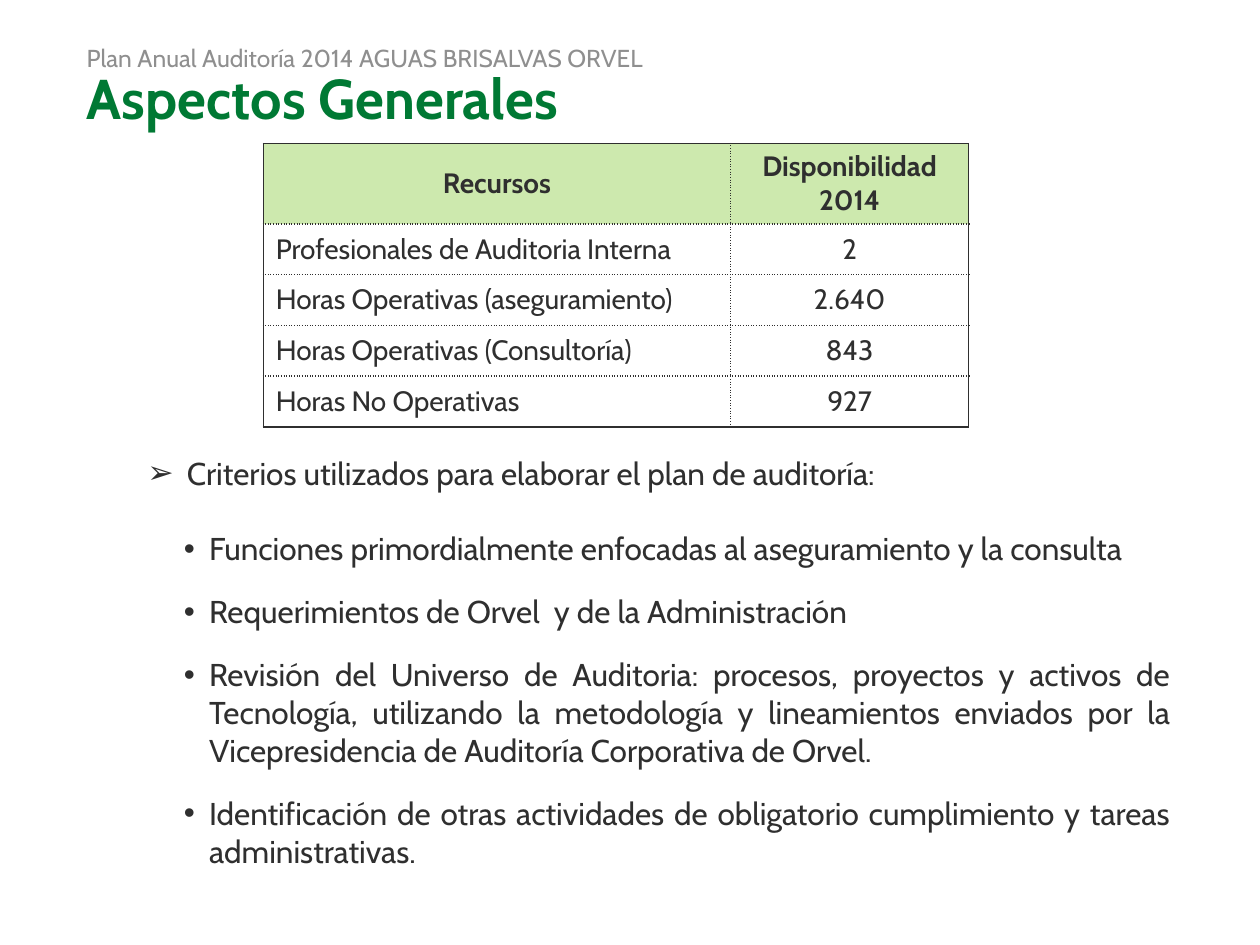
from lxml import etree
from pptx import Presentation
from pptx.dml.color import RGBColor
from pptx.enum.text import MSO_ANCHOR, MSO_AUTO_SIZE, PP_ALIGN
from pptx.oxml.ns import qn
from pptx.util import Pt

LEFT, CENTER, JUSTIFY = PP_ALIGN.LEFT, PP_ALIGN.CENTER, PP_ALIGN.JUSTIFY
TOP, MIDDLE = MSO_ANCHOR.TOP, MSO_ANCHOR.MIDDLE
FIXED = MSO_AUTO_SIZE.NONE

INK = RGBColor(0x2F, 0x2F, 0x2F)
GRAY = RGBColor(0x8F, 0x8F, 0x8F)
GREEN = RGBColor(0x00, 0x79, 0x34)
LIME = RGBColor(0xCD, 0xE9, 0xAE)

ROWS = [
    ("Recursos", "Disponibilidad 2014"),
    ("Profesionales de Auditoria Interna", "2"),
    ("Horas Operativas (aseguramiento)", "2.640"),
    ("Horas Operativas (Consultoría)", "843"),
    ("Horas No Operativas", "927"),
]
ITEMS = [
    "Funciones primordialmente enfocadas al aseguramiento y la consulta",
    "Requerimientos de Orvel  y de la Administración",
    "Revisión del Universo de Auditoria: procesos, proyectos y activos de "
    "Tecnología, utilizando la metodología y lineamientos enviados por la "
    "Vicepresidencia de Auditoría Corporativa de Orvel.",
    "Identificación de otras actividades de obligatorio cumplimiento y tareas "
    "administrativas.",
]


class Page:
    font = "Cabin"

    def __init__(self, deck):
        self.slide = deck.slides.add_slide(deck.slide_layouts[1])

    def style(self, para, size, color, bold=False, align=LEFT):
        para.alignment = align
        for run in para.runs:
            font = run.font
            font.name, font.size, font.bold = self.font, Pt(size), bold
            font.color.rgb = color

    def place(self, shape, left, top, width, height):
        shape.left, shape.top = Pt(left), Pt(top)
        shape.width, shape.height = Pt(width), Pt(height)
        frame = shape.text_frame
        frame.word_wrap = True
        frame.auto_size = FIXED
        frame.vertical_anchor = TOP
        return frame

    def title(self, text, *box):
        frame = self.place(self.slide.shapes.title, *box)
        frame.text = text
        self.style(frame.paragraphs[0], 32, GREEN, True)

    def label(self, text, *box):
        shape = self.slide.shapes.add_textbox(0, 0, 0, 0)
        frame = self.place(shape, *box)
        frame.text = text
        self.style(frame.paragraphs[0], 14, GRAY)

    def bullet(self, para, mark, margin, indent):
        props = para._p.get_or_add_pPr()
        props.set("marL", str(Pt(margin)))
        props.set("indent", str(Pt(indent)))
        etree.SubElement(props, qn("a:buChar")).set("char", mark)

    def list(self, head, items, *box):
        frame = self.place(self.slide.placeholders[1], *box)
        frame.text = head
        para = frame.paragraphs[0]
        self.bullet(para, "➢", 22.6, -22.6)
        para.space_before = Pt(0)
        self.style(para, 18, INK)
        for i, item in enumerate(items):
            para = frame.add_paragraph()
            para.text = item
            self.bullet(para, "•", 35.3, -14.4)
            para.space_before = Pt(14.4 if i else 21.6)
            self.style(para, 18, INK, align=JUSTIFY)

    def border(self, cell, side, dash):
        props = cell._tc.get_or_add_tcPr()
        line = etree.SubElement(props, qn("a:ln" + side), w=str(Pt(1)))
        fill = etree.SubElement(line, qn("a:solidFill"))
        etree.SubElement(fill, qn("a:srgbClr"), val=str(INK))
        etree.SubElement(line, qn("a:prstDash"), val=dash)

    def table(self, rows, left, top, widths, heights):
        last, end = len(rows) - 1, len(widths) - 1
        frame = self.slide.shapes.add_table(
            len(rows), len(widths), Pt(left), Pt(top),
            Pt(sum(widths)), Pt(sum(heights)))
        table = frame.table
        table.first_row = table.horz_banding = False
        for col, width in zip(table.columns, widths):
            col.width = Pt(width)
        for r, row in enumerate(rows):
            table.rows[r].height = Pt(heights[r])
            for c, text in enumerate(row):
                cell = table.cell(r, c)
                edges = {"L": c == 0, "R": c == end, "T": r == 0, "B": r == last}
                for side, outer in edges.items():
                    self.border(cell, side, "solid" if outer else "sysDot")
                if r == 0:
                    cell.fill.solid()
                    cell.fill.fore_color.rgb = LIME
                else:
                    cell.fill.background()
                cell.vertical_anchor = MIDDLE
                cell.text = text
                align = CENTER if r == 0 or c else LEFT
                self.style(cell.text_frame.paragraphs[0], 16, INK, r == 0, align)


def main():
    deck = Presentation()
    deck.slide_width, deck.slide_height = Pt(720), Pt(540)
    page = Page(deck)
    page.table(ROWS, 150.5, 82, [267, 136], [45.4] + [29] * 4)
    page.list("Criterios utilizados para elaborar el plan de auditoría:",
              ITEMS, 77, 255.6, 599, 269)
    page.label("Plan Anual Auditoría 2014 AGUAS BRISALVAS ORVEL",
               42.5, 21, 612, 22.3)
    page.title("Aspectos Generales", 42.5, 32.4, 612, 34)
    deck.save("out.pptx")


if __name__ == "__main__":
    main()
